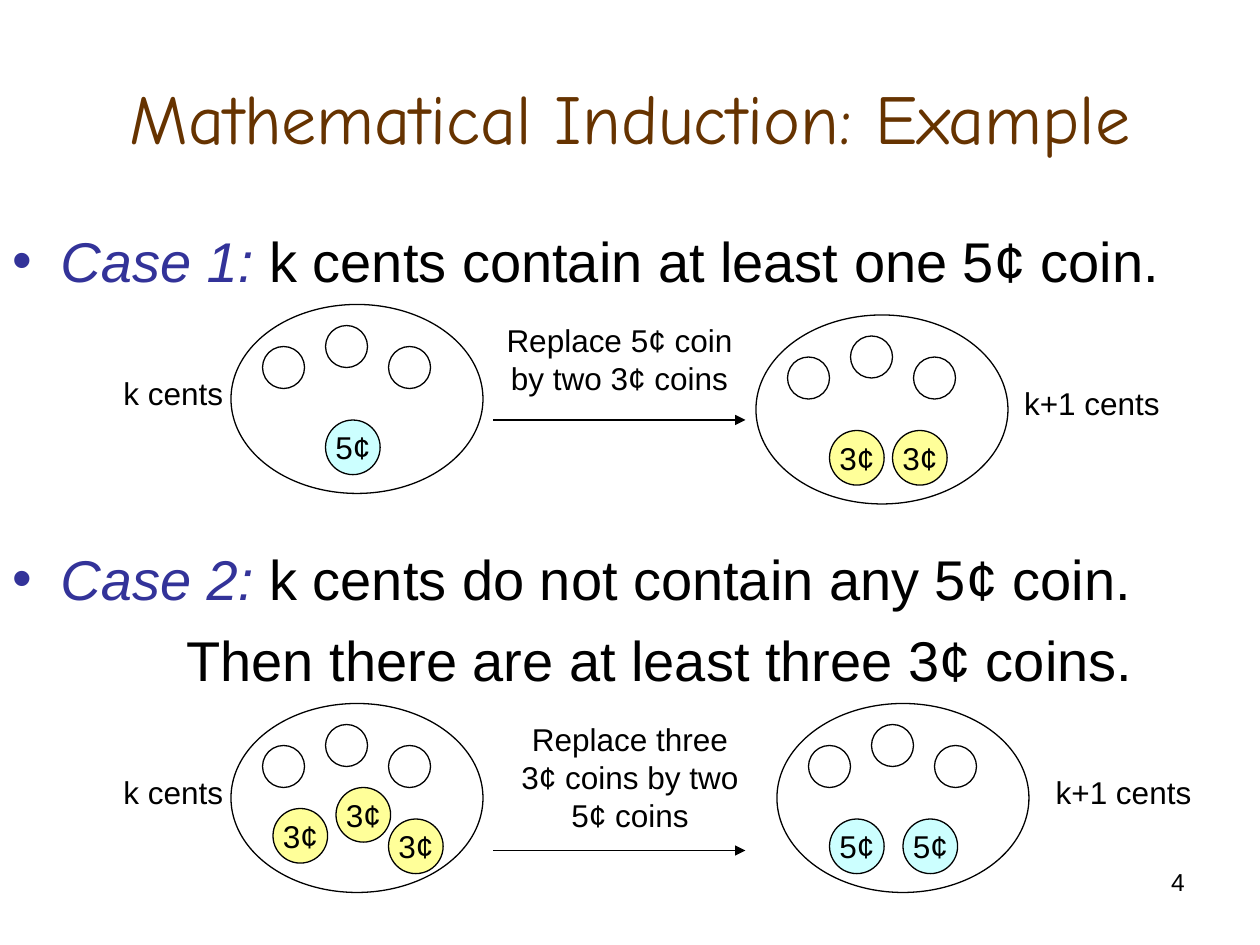
from lxml.etree import SubElement
from pptx import Presentation
from pptx.dml.color import RGBColor
from pptx.enum.shapes import MSO_CONNECTOR as Connector, MSO_SHAPE as Shape
from pptx.enum.text import MSO_ANCHOR as Anchor, MSO_AUTO_SIZE as AutoSize, PP_ALIGN as Align
from pptx.oxml.ns import qn
from pptx.util import Inches, Pt

BLACK = RGBColor(0x00, 0x00, 0x00)
WHITE = RGBColor(0xFF, 0xFF, 0xFF)
BROWN = RGBColor(0x66, 0x33, 0x00)
INDIGO = RGBColor(0x33, 0x33, 0x99)
AQUA = RGBColor(0xCC, 0xFF, 0xFF)
YELLOW = RGBColor(0xFF, 0xFF, 0x99)

COIN_FILL = {"3¢": YELLOW, "5¢": AQUA}
PLAIN_COINS = [(3, 4), (9, 2), (15, 4)]
PURSE_W, PURSE_H = 24, 18  # in grid units
PLAIN_SIZE, COIN_SIZE = 4, 5.2
LABEL_H = 4.8


def grid(*units):
    """Lengths on a grid of 12 columns and rows to the inch."""
    return [Inches(unit / 12) for unit in units]


def write(paragraph, text, size=18, font="Arial", color=BLACK, italic=False, align=None):
    run = paragraph.add_run()
    run.text = text
    run.font.size = Pt(size)
    run.font.name = font
    run.font.color.rgb = color
    run.font.italic = italic
    if align is not None:
        paragraph.alignment = align


def add_label(slide, box, text, **style):
    frame = slide.shapes.add_textbox(*grid(*box)).text_frame
    frame.word_wrap = True
    write(frame.paragraphs[0], text, **{"align": Align.CENTER, **style})


def add_circle(slide, box, fill=WHITE, text=None):
    circle = slide.shapes.add_shape(Shape.OVAL, *grid(*box))
    circle.shadow.inherit = False
    circle.fill.solid()
    circle.fill.fore_color.rgb = fill
    circle.line.color.rgb = BLACK
    circle.line.width = Pt(0.75)
    if text:
        frame = circle.text_frame
        frame.word_wrap = False
        frame.vertical_anchor = Anchor.MIDDLE
        write(frame.paragraphs[0], text, align=Align.CENTER)


def add_arrow(slide, left, right, row):
    arrow = slide.shapes.add_connector(Connector.STRAIGHT, *grid(left, row, right, row))
    arrow.line.color.rgb = BLACK
    arrow.line.width = Pt(0.75)
    SubElement(arrow.line._get_or_add_ln(), qn("a:tailEnd"), type="triangle")
    SubElement(arrow._element.spPr, qn("a:effectLst"))


def add_purse(slide, left, top, value, coins):
    """An oval of plain coins and the given coins of one value."""
    add_circle(slide, (left, top, PURSE_W, PURSE_H))
    for x, y in PLAIN_COINS:
        add_circle(slide, (left + x, top + y, PLAIN_SIZE, PLAIN_SIZE))
    for x, y in coins:
        add_circle(slide, (left + x, top + y, COIN_SIZE, COIN_SIZE), COIN_FILL[value], value)


def add_case(slide, top, before, after, after_at, total_box, caption, caption_left, arrow_drop):
    """One replacement step; places are relative to its top row."""
    after_left, after_drop = after_at
    total_left, total_width = total_box
    after_top = top + after_drop
    add_purse(slide, 22, top, *before)
    add_purse(slide, after_left, after_top, *after)
    add_label(slide, (10, top + 6, 13, LABEL_H), "k cents")
    add_label(slide, (total_left, after_top + 6, total_width, LABEL_H), "k+1 cents")
    add_label(slide, (caption_left, top + 1, 24, 9), caption)
    add_arrow(slide, 47, 71, top + arrow_drop)


def place(placeholder, box):
    placeholder.left, placeholder.top, placeholder.width, placeholder.height = grid(*box)
    placeholder.text_frame.auto_size = AutoSize.NONE
    return placeholder.text_frame


def add_title(slide):
    frame = place(slide.shapes.title, (6, 3.6, 108, 15))
    frame.vertical_anchor = Anchor.MIDDLE
    write(frame.paragraphs[0], "Mathematical Induction: Example", size=40,
          font="Comic Neue", color=BROWN, align=Align.CENTER)


def add_case_list(slide):
    frame = place(slide.placeholders[1], (0, 21, 120, 69))
    # heading, statement, space before, left margin and first-line indent
    lines = [
        ("Case 1: ", "k cents contain at least one 5¢ coin.", 3.5, 0.38, -0.38),
        ("Case 2: ", "k cents do not contain any 5¢ coin.", 143, 0.38, -0.38),
        ("", "Then there are at least three 3¢ coins.", 8, 1.38, 0),
    ]
    for number, (heading, statement, gap, margin, indent) in enumerate(lines):
        paragraph = frame.add_paragraph() if number else frame.paragraphs[0]
        paragraph.space_before = Pt(gap)
        properties = paragraph._p.get_or_add_pPr()
        properties.set("marL", str(Inches(margin)))
        properties.set("indent", str(Inches(indent)))
        if heading:
            write(paragraph, heading, size=32, color=INDIGO, italic=True)
        else:
            SubElement(properties, qn("a:buNone"))
        write(paragraph, statement, size=32)


def main():
    deck = Presentation()
    deck.slide_width, deck.slide_height = Inches(10), Inches(7.5)
    slide = deck.slides.add_slide(deck.slide_layouts[1])

    add_title(slide)
    add_case_list(slide)
    # Case 1: one 5¢ coin becomes two 3¢ coins
    add_case(slide, 29, ("5¢", [(9, 11)]), ("3¢", [(7, 11), (13, 11)]),
             after_at=(72, 1), total_box=(95, 18),
             caption="Replace 5¢ coin by two 3¢ coins", caption_left=47, arrow_drop=11)
    # Case 2: three 3¢ coins become two 5¢ coins
    add_case(slide, 67, ("3¢", [(4, 10), (10, 8), (15, 11)]), ("5¢", [(5, 11), (12, 11)]),
             after_at=(74, 0), total_box=(99, 16),
             caption="Replace three 3¢ coins by two 5¢ coins", caption_left=48, arrow_drop=14)
    # Slide number
    add_label(slide, (86, 82, 28, 6.2), "4", size=14, align=Align.RIGHT)

    deck.save("out.pptx")


if __name__ == "__main__":
    main()
